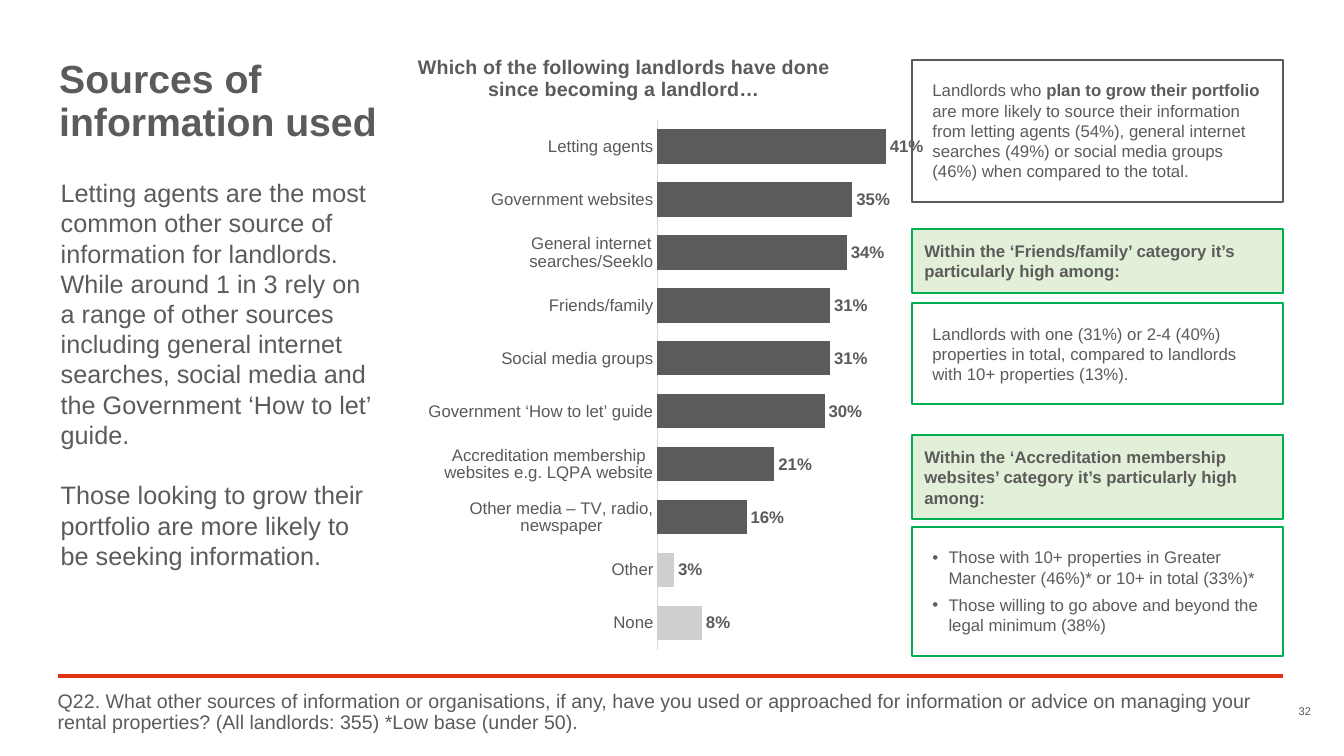
from lxml import etree
from pptx import Presentation
from pptx.chart.data import CategoryChartData
from pptx.dml.color import RGBColor
from pptx.enum import chart as ch, shapes, text
from pptx.oxml import parse_xml
from pptx.oxml.ns import nsdecls, qn
from pptx.util import Pt

FONT = "Arial"
GREY, PALE, AXIS = "5C5B5A", "D0CECE", "D9D9D9"
GREEN, MINT, RED = "00B050", "E2F0D9", "E33317"
PANEL_X, PANEL_W = 651.6, 265

SOURCES = [
    ("None", 0.08),
    ("Other", 0.03),
    ("Other media – TV, radio, newspaper", 0.16),
    ("Accreditation membership websites e.g. LQPA website", 0.21),
    ("Government ‘How to let’ guide", 0.30),
    ("Social media groups", 0.31),
    ("Friends/family", 0.31),
    ("General internet searches/Seeklo", 0.34),
    ("Government websites", 0.35),
    ("Letting agents", 0.41),
]
MINOR = ("None", "Other")


def rgb(value):
    return RGBColor.from_string(value)


def style(font, size, color=GREY, bold=False):
    font.name, font.size, font.bold = FONT, Pt(size), bold
    font.color.rgb = rgb(color)


def write(tf, paras, size, inset=0, spacing=None, after=0, bullets=False):
    tf.word_wrap = True
    tf.vertical_anchor = text.MSO_ANCHOR.TOP
    tf.margin_left = tf.margin_right = tf.margin_top = tf.margin_bottom = Pt(inset)
    for i, runs in enumerate(paras):
        p = tf.paragraphs[0] if i == 0 else tf.add_paragraph()
        p.alignment = text.PP_ALIGN.LEFT
        p.space_after = Pt(after)
        if spacing:
            p.line_spacing = spacing
        if bullets:
            pPr = p._p.get_or_add_pPr()
            pPr.set("marL", str(Pt(11.5)))
            pPr.set("indent", str(-Pt(11.5)))
            etree.SubElement(pPr, qn("a:buFont")).set("typeface", FONT)
            etree.SubElement(pPr, qn("a:buChar")).set("char", "•")
        for words, bold in runs:
            r = p.add_run()
            r.text = words
            style(r.font, size, bold=bold)


def add_text(s, box, paras, size, **layout):
    tf = s.shapes.add_textbox(*map(Pt, box)).text_frame
    write(tf, paras, size, **layout)
    return tf


def add_panel(s, top, height, paras, line=GREEN, fill=None, inset=14.4, after=5, bullets=False):
    sp = s.shapes.add_shape(shapes.MSO_SHAPE.RECTANGLE, *map(Pt, (PANEL_X, top, PANEL_W, height)))
    sp.shadow.inherit = False
    if fill:
        sp.fill.solid()
        sp.fill.fore_color.rgb = rgb(fill)
    else:
        sp.fill.background()
    sp.line.color.rgb = rgb(line)
    sp.line.width = Pt(1.5)
    write(sp.text_frame, paras, 12, inset=inset, after=after, bullets=bullets)


def add_heading(s, top, height, words):
    add_panel(s, top, height, [[(words, True)]], fill=MINT, inset=8.64, after=0)


def add_rule(s, x1, x2, y):
    c = s.shapes.add_connector(shapes.MSO_CONNECTOR.STRAIGHT, Pt(x1), Pt(y), Pt(x2), Pt(y))
    c.line.color.rgb = rgb(RED)
    c.line.width = Pt(3)
    etree.SubElement(c._element.spPr, qn("a:effectLst"))


def manual_layout(inner=False, **parts):
    xml = '<c:layoutTarget val="inner"/>' if inner else ""
    xml += "".join(f'<c:{k}Mode val="edge"/>' for k in ("x", "y"))
    xml += "".join(f'<c:{k} val="{v}"/>' for k, v in parts.items())
    return parse_xml(f'<c:layout {nsdecls("c")}><c:manualLayout>{xml}</c:manualLayout></c:layout>')


def place(parent, layout, after=None):
    for old in parent.findall(qn("c:layout")):
        parent.remove(old)
    if after is None:
        parent.insert(0, layout)
    else:
        after.addnext(layout)


def add_sources_chart(s, box, title):
    data = CategoryChartData(number_format="0%")
    data.categories = [name for name, _ in SOURCES]
    data.add_series("Series 1", [value for _, value in SOURCES])
    chart = s.shapes.add_chart(ch.XL_CHART_TYPE.BAR_CLUSTERED, *map(Pt, box), data).chart
    style(chart.font, 10, "000000")
    chart.has_legend = False

    chart.has_title = True
    p = chart.chart_title.text_frame.paragraphs[0]
    r = p.add_run()
    r.text = title
    style(r.font, 14, bold=True)
    chart.chart_title.include_in_layout = False
    heading = chart.chart_title._element
    place(heading, manual_layout(x=0, y=0.01), heading.find(qn("c:tx")))
    place(chart._chartSpace.chart.plotArea,
          manual_layout(True, x=0.457, y=0.123, w=0.471, h=0.86))

    cat = chart.category_axis
    cat.major_tick_mark = cat.minor_tick_mark = ch.XL_TICK_MARK.NONE
    cat.format.line.color.rgb = rgb(AXIS)
    cat.format.line.width = Pt(0.75)
    style(cat.tick_labels.font, 12, "595959")
    val = chart.value_axis
    val.minimum_scale, val.maximum_scale = 0, 0.45
    val.has_major_gridlines = False
    val.visible = False

    plot = chart.plots[0]
    plot.gap_width = 55
    plot.vary_by_categories = False
    series = plot.series[0]
    series.invert_if_negative = False
    series.format.fill.solid()
    series.format.fill.fore_color.rgb = rgb(GREY)
    for i, (name, _) in enumerate(SOURCES):
        if name in MINOR:
            fill = series.points[i].format.fill
            fill.solid()
            fill.fore_color.rgb = rgb(PALE)
    labels = series.data_labels
    labels.show_value = True
    labels.number_format, labels.number_format_is_linked = "0%", False
    labels.position = ch.XL_LABEL_POSITION.OUTSIDE_END
    style(labels.font, 12, bold=True)


def main():
    prs = Presentation()
    prs.slide_width, prs.slide_height = Pt(960), Pt(540)
    s = prs.slides.add_slide(prs.slide_layouts[6])

    number = add_text(s, (908.6, 503.3, 28, 9.4), [[("32", False)]], 8)
    number.vertical_anchor = text.MSO_ANCHOR.BOTTOM
    number.paragraphs[0].alignment = text.PP_ALIGN.RIGHT
    add_rule(s, 41.3, 916.6, 482.8)

    add_text(s, (42.3, 42.8, 265, 61.2), [[("Sources of information used", True)]], 28, spacing=0.9)
    story = add_text(s, (43.4, 126.7, 223.2, 283.7), [
        [("Letting agents are the most common other source of information for landlords.", False)],
        [("While around 1 in 3 rely on a range of other sources including general internet "
          "searches, social media and the Government ‘How to let’ guide.", False)],
        [("Those looking to grow their portfolio are more likely to be seeking information.", False)],
    ], 18)
    story.paragraphs[2].space_before = Pt(21.6)

    add_sources_chart(s, (295.9, 31.7, 380.2, 439.9),
                      "Which of the following landlords have done since becoming a landlord…")

    add_panel(s, 42.9, 101.5, [[
        ("Landlords who ", False),
        ("plan to grow their portfolio ", True),
        ("are more likely to source their information from letting agents (54%), general internet "
         "searches (49%) or social media groups (46%) when compared to the total.", False),
    ]], line=GREY)
    add_heading(s, 163.4, 46.1, "Within the ‘Friends/family’ category it’s particularly high among:")
    add_panel(s, 216.5, 72, [[
        ("Landlords with one (31%) or 2-4 (40%) properties in total, compared to landlords "
         "with 10+ properties (13%).", False),
    ]])
    add_heading(s, 310.6, 60.5, "Within the ‘Accreditation membership websites’ category "
                                "it’s particularly high among:")
    add_panel(s, 376.4, 92.2, [
        [("Those with 10+ properties in Greater Manchester (46%)* or 10+ in total (33%)*", False)],
        [("Those willing to go above and beyond the legal minimum (38%)", False)],
    ], bullets=True)

    add_text(s, (41.2, 493.9, 875.6, 34.6), [[
        ("Q22. What other sources of information or organisations, if any, have you used or "
         "approached for information or advice on managing your rental properties? "
         "(All landlords: 355) *Low base (under 50).", False),
    ]], 14, spacing=0.9)
    prs.save("out.pptx")


main()
